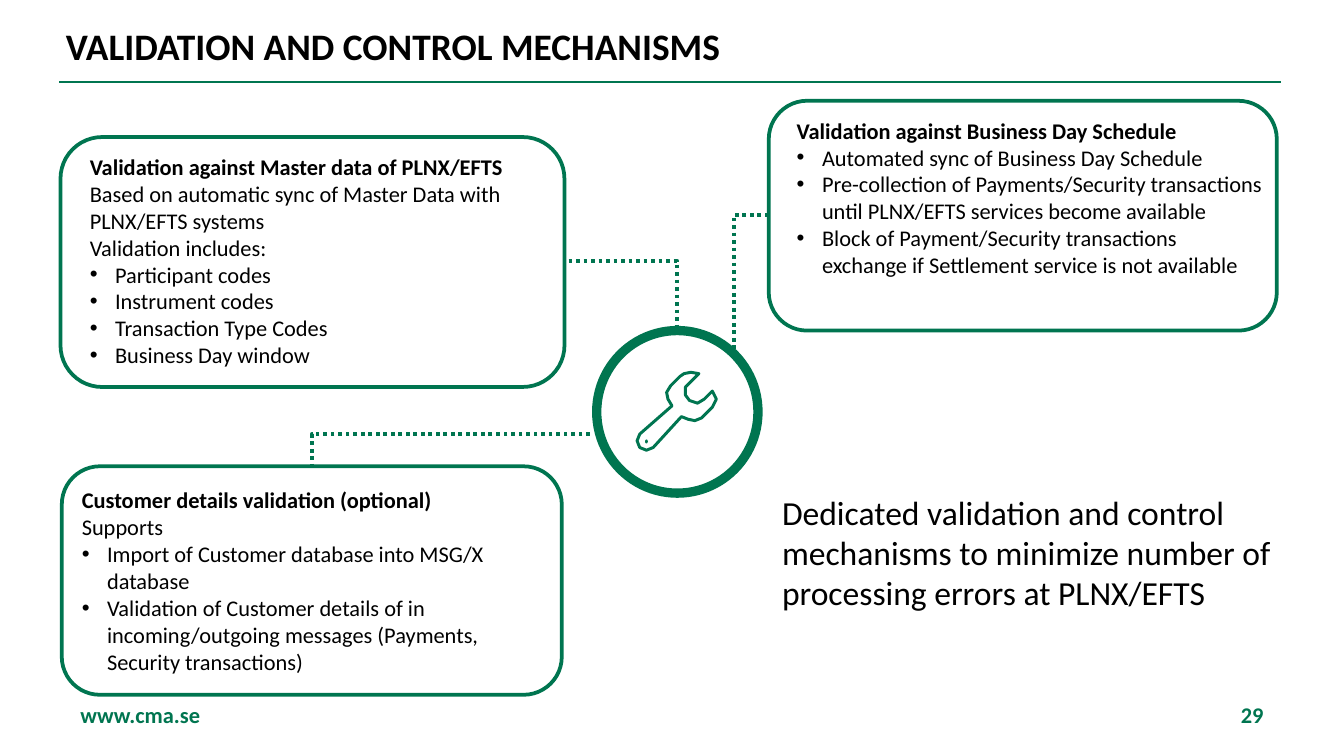
from dataclasses import dataclass

from lxml import etree
from pptx import Presentation
from pptx import util as u
from pptx.dml.color import RGBColor
from pptx.enum import dml, shapes, text
from pptx.oxml.ns import qn
from pptx.slide import Slide

COLUMNS, ROWS = 100, 56.25
SLIDE_WIDTH = u.Inches(10)
SLIDE_HEIGHT = SLIDE_WIDTH * 9 // 16


@dataclass(frozen=True)
class Theme:
    font: str = "Calibri"
    green: RGBColor = RGBColor(0x00, 0x75, 0x50)
    black: RGBColor = RGBColor(0, 0, 0)
    title: int = 20
    statement: int = 18
    body: int = 12
    rule: float = 1.25
    border: float = 2
    ring: float = 5
    icon: float = 1.6


@dataclass(frozen=True)
class Area:
    column: float
    row: float
    columns: float
    rows: float

    def box(self) -> tuple[int, int, int, int]:
        return x(self.column), y(self.row), x(self.columns), y(self.rows)


@dataclass(frozen=True)
class Line:
    words: str
    bold: bool = False
    bullet: bool = False


@dataclass(frozen=True)
class Panel:
    frame: Area
    text_area: Area
    heading: str
    intro: tuple[str, ...]
    bullets: tuple[str, ...]


@dataclass(frozen=True)
class Label:
    area: Area
    words: str
    size: int
    color: RGBColor
    bold: bool = True
    align: text.PP_ALIGN = text.PP_ALIGN.LEFT
    anchor: text.MSO_ANCHOR = text.MSO_ANCHOR.MIDDLE
    padded: bool = True


@dataclass(frozen=True)
class Link:
    start: tuple[float, float]
    end: tuple[float, float]


THEME = Theme()

LABELS = [
    Label(Area(4.9, 1.45, 66.7, 3.9), "VALIDATION AND CONTROL MECHANISMS",
          THEME.title, THEME.black, padded=False),
    Label(Area(5, 51.7, 23.3, 3), "www.cma.se", THEME.body, THEME.green),
    Label(Area(71.7, 51.7, 23.3, 3), "29", THEME.body, THEME.green,
          align=text.PP_ALIGN.RIGHT),
    Label(Area(57.2, 36.1, 39.9, 10.1),
          "Dedicated validation and control mechanisms to minimize number of "
          "processing errors at PLNX/EFTS",
          THEME.statement, THEME.black, bold=False, anchor=text.MSO_ANCHOR.TOP),
]

PANELS = [
    Panel(Area(57.2, 7.5, 37.8, 17.1), Area(58.3, 8.2, 36.7, 13.1),
          "Validation against Business Day Schedule", (),
          ("Automated sync of Business Day Schedule",
           "Pre-collection of Payments/Security transactions until PLNX/EFTS "
           "services become available",
           "Block of Payment/Security transactions exchange if Settlement "
           "service is not available")),
    Panel(Area(4.5, 10.2, 37.5, 18.6), Area(5.7, 10.9, 36.6, 17.2),
          "Validation against Master data of PLNX/EFTS",
          ("Based on automatic sync of Master Data with PLNX/EFTS systems",
           "Validation includes:"),
          ("Participant codes", "Instrument codes",
           "Transaction Type Codes", "Business Day window")),
    Panel(Area(4.6, 34.7, 37.2, 17), Area(5.1, 35.7, 36.1, 17.2),
          "Customer details validation (optional)", ("Supports",),
          ("Import of Customer database into MSG/X database",
           "Validation of Customer details of in incoming/outgoing messages "
           "(Payments, Security transactions)")),
]

LINKS = [
    Link((43.9, 32.3), (23.2, 34.7)),
    Link((57.2, 16), (54.6, 26.3)),
    Link((42.3, 19.4), (50.4, 24.6)),
]

RING = Area(44.4, 24.6, 12, 12.1)
HANDLE_HOLE = Area(48, 32.7, 0.2, 0.3)
WRENCH = [
    (53, 29.1), (52.4, 29.7), (51.9, 30), (51.3, 29.8), (51, 29.4), (51, 28.8),
    (51.3, 28.5), (52, 27.8), (51.4, 27.7), (50.9, 27.8), (50.6, 28),
    (49.9, 28.7), (49.6, 29.2), (49.7, 29.7), (50, 30.2), (47.6, 32.3),
    (47.4, 32.8), (47.6, 33.3), (48.1, 33.5), (48.6, 33.3), (50.7, 31),
    (51.2, 31.2), (51.7, 31.3), (52.2, 31.1), (53, 30.3), (53.3, 29.7),
]


def x(columns: float) -> int:
    return round(SLIDE_WIDTH * columns / COLUMNS)


def y(rows: float) -> int:
    return round(SLIDE_HEIGHT * rows / ROWS)


def add_bullet(paragraph) -> None:
    properties = paragraph._p.get_or_add_pPr()
    properties.set("marL", str(x(1.88)))
    properties.set("indent", str(-x(1.88)))
    etree.SubElement(properties, qn("a:buFont")).set("typeface", "Arial")
    etree.SubElement(properties, qn("a:buChar")).set("char", "•")


def write(slide: Slide, area: Area, lines: list[Line], size: int, color: RGBColor):
    frame = slide.shapes.add_textbox(*area.box()).text_frame
    frame.word_wrap = True
    for index, line in enumerate(lines):
        paragraph = frame.paragraphs[0] if index == 0 else frame.add_paragraph()
        paragraph.text = line.words
        if line.bullet:
            add_bullet(paragraph)
        paragraph.font.name = THEME.font
        paragraph.font.size = u.Pt(size)
        paragraph.font.bold = line.bold
        paragraph.font.color.rgb = color
    return frame


def add_label(slide: Slide, label: Label) -> None:
    frame = write(slide, label.area, [Line(label.words, label.bold)], label.size, label.color)
    frame.vertical_anchor = label.anchor
    frame.paragraphs[0].alignment = label.align
    if not label.padded:
        frame.margin_left = frame.margin_right = frame.margin_top = frame.margin_bottom = 0


def outline(shape, width: float) -> None:
    shape.shadow.inherit = False
    shape.fill.background()
    shape.line.color.rgb = THEME.green
    shape.line.width = u.Pt(width)


def add_panel(slide: Slide, panel: Panel) -> None:
    lines = [Line(panel.heading, bold=True)]
    lines += [Line(words) for words in panel.intro]
    lines += [Line(words, bullet=True) for words in panel.bullets]
    write(slide, panel.text_area, lines, THEME.body, THEME.black)
    frame = slide.shapes.add_shape(shapes.MSO_SHAPE.ROUNDED_RECTANGLE, *panel.frame.box())
    outline(frame, THEME.border)


def add_line(slide: Slide, kind: shapes.MSO_CONNECTOR, link: Link, width: float):
    (left, top), (right, bottom) = link.start, link.end
    connector = slide.shapes.add_connector(kind, x(left), y(top), x(right), y(bottom))
    connector.line.color.rgb = THEME.green
    connector.line.width = u.Pt(width)
    etree.SubElement(connector._element.spPr, qn("a:effectLst"))
    return connector


def add_dotted_elbow(slide: Slide, link: Link) -> None:
    connector = add_line(slide, shapes.MSO_CONNECTOR.ELBOW, link, THEME.border)
    connector.line.dash_style = dml.MSO_LINE.ROUND_DOT
    connector._element.spPr.find(qn("a:prstGeom")).set("prst", "bentConnector2")


def add_wrench(slide: Slide) -> None:
    ring = slide.shapes.add_shape(shapes.MSO_SHAPE.OVAL, *RING.box())
    outline(ring, THEME.ring)
    points = [(x(column), y(row)) for column, row in WRENCH]
    builder = slide.shapes.build_freeform(*points[0])
    builder.add_line_segments(points[1:], close=True)
    outline(builder.convert_to_shape(), THEME.icon)
    hole = slide.shapes.add_shape(shapes.MSO_SHAPE.OVAL, *HANDLE_HOLE.box())
    hole.shadow.inherit = False
    hole.fill.solid()
    hole.fill.fore_color.rgb = THEME.green
    hole.line.fill.background()


def main() -> None:
    presentation = Presentation()
    presentation.slide_width, presentation.slide_height = SLIDE_WIDTH, SLIDE_HEIGHT
    slide = presentation.slides.add_slide(presentation.slide_layouts[6])
    add_line(slide, shapes.MSO_CONNECTOR.STRAIGHT, Link((95.3, 6.1), (4.4, 6.1)), THEME.rule)
    for label in LABELS:
        add_label(slide, label)
    for link in LINKS:
        add_dotted_elbow(slide, link)
    for panel in PANELS:
        add_panel(slide, panel)
    add_wrench(slide)
    presentation.save("out.pptx")


if __name__ == "__main__":
    main()
